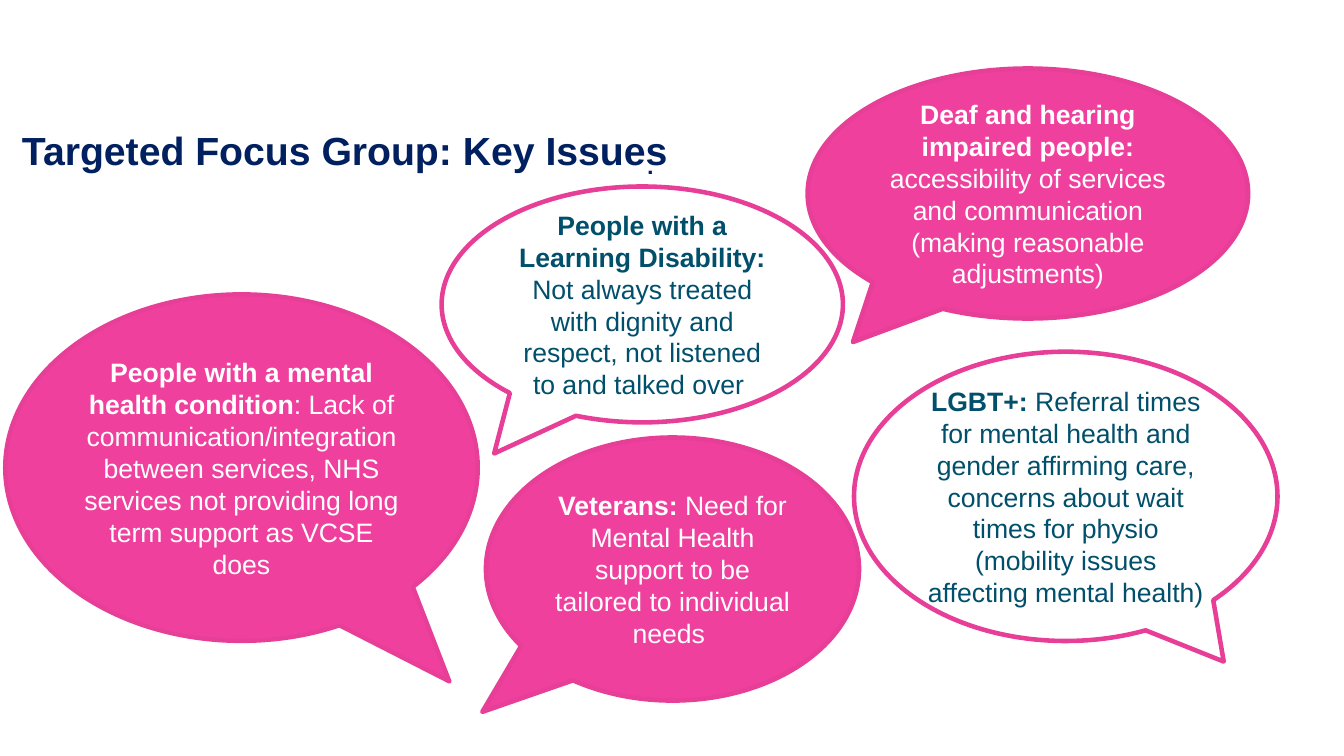
"""Build the slide of key issues raised by targeted focus groups."""
from pptx import Presentation
from pptx.dml.color import RGBColor
from pptx.enum.shapes import MSO_SHAPE as Shape
from pptx.enum.text import MSO_ANCHOR as Anchor, PP_ALIGN as Align
from pptx.util import Inches, Pt

COLORS = {"navy": "002060", "pink": "F0409D", "edge": "E73E97",
          "teal": "004F6B", "white": "FFFFFF"}
WIDTH, HEIGHT = Inches(13.33), Inches(7.5)

TITLE = ("Targeted Focus Group: Key Issues", (0.9, 12.93, 96.32, 14.53))
DOT = (".", (0.23, 20.67, 96.32, 2.67))

# Each bubble: group, issue, percent of slide, tail, filled, line width
BUBBLES = [
    ("Deaf and hearing impaired people: ",
     "accessibility of services and communication (making reasonable adjustments)",
     (60.09, 9.07, 32.78, 33.07), (-0.397, 0.594), True, 3.25),
    ("People with a mental health condition",
     ": Lack of communication/integration between services, NHS services "
     "not providing long term support as VCSE does",
     (0.38, 38.93, 35.18, 45.87), (0.44, 0.617), True, 3),
    ("People with a Learning Disability: ",
     "Not always treated with dignity and respect, not listened to and talked over ",
     (32.86, 24.67, 29.86, 31.2), (-0.369, 0.632), False, 3.25),
    ("Veterans: ",
     "Need for Mental Health support to be tailored to individual needs ",
     (36.16, 57.87, 27.76, 34.8), (-0.51, 0.543), True, 3.25),
    ("LGBT+: ",
     "Referral times for mental health and gender affirming care, concerns "
     "about wait times for physio (mobility issues affecting mental health)",
     (63.54, 46.53, 31.51, 38.27), (0.373, 0.571), False, 3.25),
]


def color(name):
    return RGBColor.from_string(COLORS[name])


def place(percents):
    return [round(share / 100 * side)
            for share, side in zip(percents, (WIDTH, HEIGHT) * 2)]


def style(font, size, name, bold, face="Arial"):
    font.size, font.name, font.bold = Pt(size), face, bold
    font.color.rgb = color(name)


def add_text(page, text, percents, size, face, spacing):
    frame = page.shapes.add_textbox(*place(percents)).text_frame
    frame.word_wrap = True
    frame.vertical_anchor = Anchor.MIDDLE
    para = frame.paragraphs[0]
    para.text = text
    para.line_spacing = spacing
    style(para.runs[0].font, size, "navy", True, face)
    return frame


def add_bubble(page, group, issue, percents, tail, filled, line_width):
    bubble = page.shapes.add_shape(Shape.OVAL_CALLOUT, *place(percents))
    bubble.shadow.inherit = False
    bubble.adjustments[0], bubble.adjustments[1] = tail
    if filled:
        bubble.fill.solid()
        bubble.fill.fore_color.rgb = color("pink")
    else:
        bubble.fill.background()
    bubble.line.color.rgb = color("edge")
    bubble.line.width = Pt(line_width)
    frame = bubble.text_frame
    frame.word_wrap = True
    frame.vertical_anchor = Anchor.MIDDLE
    para = frame.paragraphs[0]
    para.alignment = Align.CENTER
    for text, bold in ((group, True), (issue, False)):
        span = para.add_run()
        span.text = text
        style(span.font, 19, "white" if filled else "teal", bold)


def main():
    deck = Presentation()
    deck.slide_width, deck.slide_height = WIDTH, HEIGHT
    page = deck.slides.add_slide(deck.slide_layouts[6])
    add_text(page, *TITLE, 28, "Arial", 0.9)
    for bubble in BUBBLES:
        add_bubble(page, *bubble)
    dot = add_text(page, *DOT, 19, "Manrope", 0.7)
    dot.margin_top = dot.margin_bottom = 0
    dot.vertical_anchor = Anchor.TOP
    dot.paragraphs[0].alignment = Align.CENTER
    deck.save("out.pptx")


if __name__ == "__main__":
    main()
